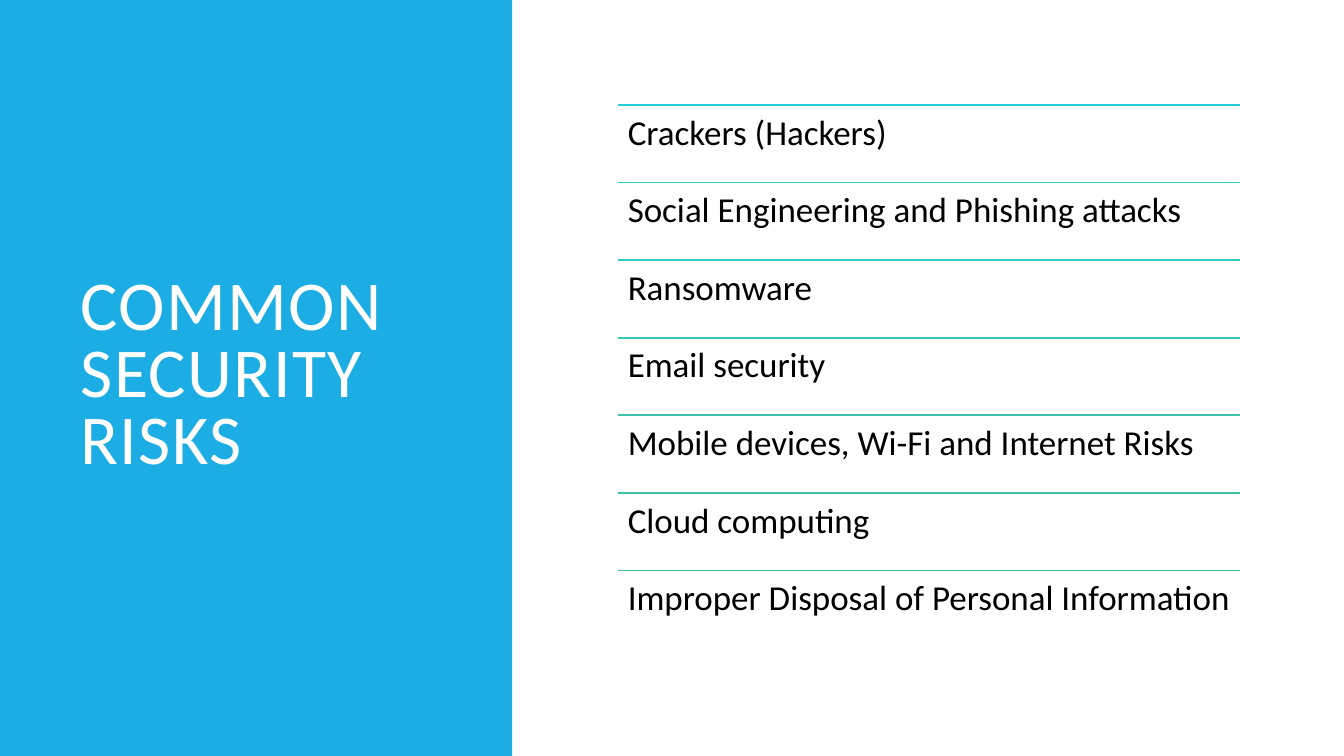
from pptx import Presentation
from pptx.dml.color import RGBColor
from pptx.enum.shapes import MSO_CONNECTOR, MSO_SHAPE
from pptx.enum.text import MSO_ANCHOR, MSO_AUTO_SIZE, PP_ALIGN
from pptx.oxml.ns import qn
from pptx.util import Pt
from lxml.etree import SubElement

COLORS = {"panel": "1CADE4", "title": "FFFFFF", "text": "000000"}
RISKS = [
    ("Crackers (Hackers)", "27CED7"),
    ("Social Engineering and Phishing attacks", "2CD2D1"),
    ("Ransomware", "30CDC3"),
    ("Email security", "35C8B7"),
    ("Mobile devices, Wi-Fi and Internet Risks", "39C4AB"),
    ("Cloud computing", "3EBFA0"),
    ("Improper Disposal of Personal Information", "42BA97"),
]
LEFT, TOP, WIDTH, ROW = 441.36, 74.88, 444.24, 55.44
MARGIN = 7.2


def write(tf, text, size, color, anchor, spacing):
    """Fill a text frame with one left-aligned paragraph and return its run."""
    frame = {"word_wrap": True, "auto_size": MSO_AUTO_SIZE.NONE, "vertical_anchor": anchor}
    for side in ("left", "top", "right", "bottom"):
        frame[f"margin_{side}"] = Pt(MARGIN)
    for name, value in frame.items():
        setattr(tf, name, value)
    p = tf.paragraphs[0]
    p.alignment = PP_ALIGN.LEFT
    p.line_spacing = spacing
    r = p.add_run()
    r.text = text
    for name, value in {"name": "Calibri", "size": Pt(size)}.items():
        setattr(r.font, name, value)
    r.font.color.rgb = RGBColor.from_string(color)
    return r


prs = Presentation()
prs.slide_width, prs.slide_height = Pt(960), Pt(540)
s = prs.slides.add_slide(prs.slide_layouts[5])

# Blue panel, placed behind the title
panel = s.shapes.add_shape(MSO_SHAPE.RECTANGLE, 0, 0, Pt(365.76), Pt(540))
panel.shadow.inherit = False
panel.fill.solid()
panel.fill.fore_color.rgb = RGBColor.from_string(COLORS["panel"])
panel.line.fill.background()
title = s.shapes.title
title._element.addprevious(panel._element)

title.left, title.top, title.width, title.height = Pt(50.4), Pt(50.4), Pt(269.28), Pt(438.48)
r = write(title.text_frame, "COMMON SECURITY RISKS", 50, COLORS["title"], MSO_ANCHOR.MIDDLE, 0.8)
r.font._element.set("spc", "100")

# One rule and one label per risk
for i, (risk, color) in enumerate(RISKS):
    y = Pt(TOP + i * ROW)
    rule = s.shapes.add_connector(MSO_CONNECTOR.STRAIGHT, Pt(LEFT), y, Pt(LEFT + WIDTH), y)
    rule.line.color.rgb = RGBColor.from_string(color)
    rule.line.width = Pt(1.25)
    SubElement(rule._element.spPr, qn("a:effectLst"))
    label = s.shapes.add_textbox(Pt(LEFT), y, Pt(WIDTH), Pt(ROW))
    write(label.text_frame, risk, 25, COLORS["text"], MSO_ANCHOR.TOP, 0.9)

prs.save("out.pptx")
